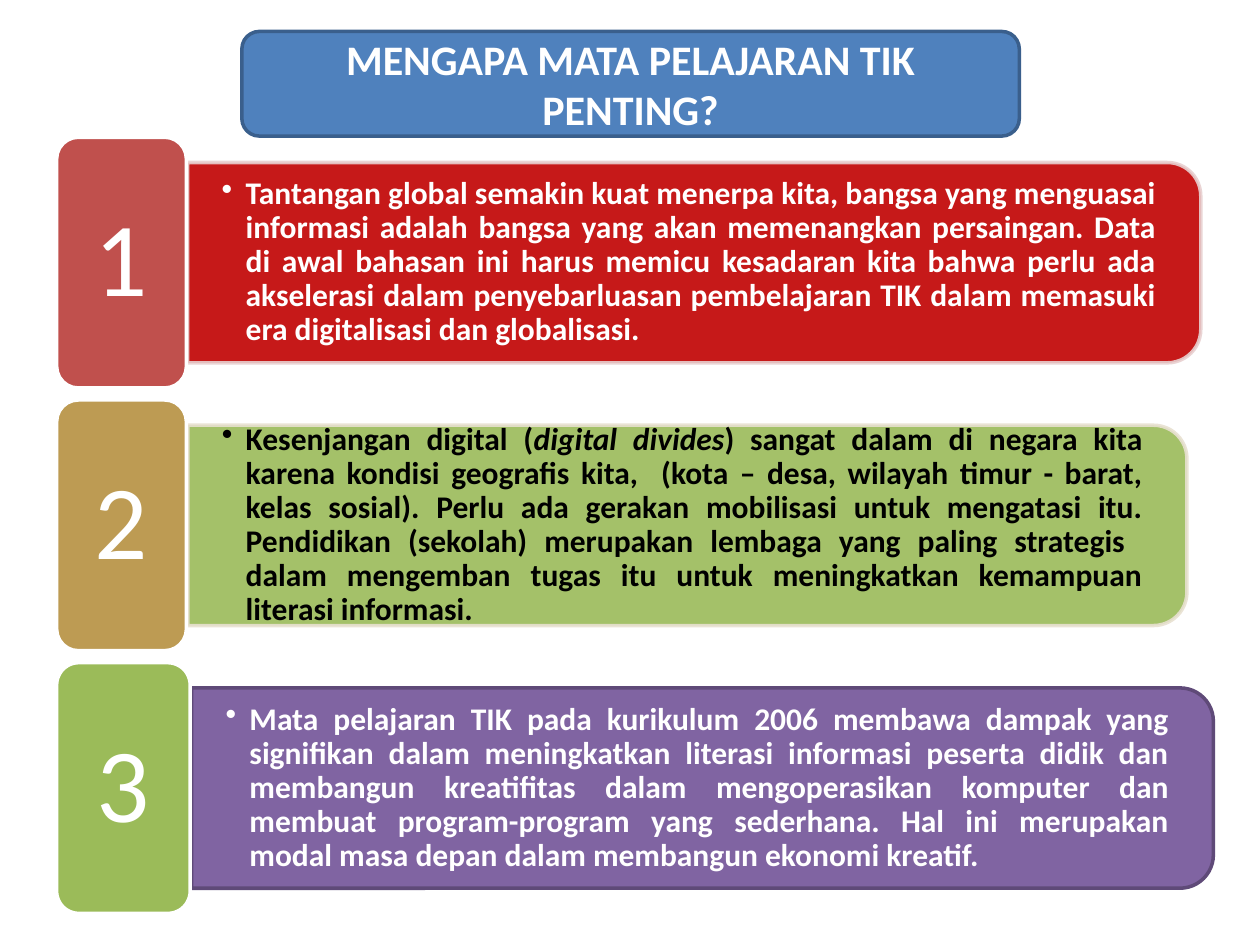
from lxml.etree import SubElement
from pptx import Presentation
from pptx.dml.color import RGBColor
from pptx.enum.shapes import MSO_SHAPE
from pptx.enum.text import MSO_ANCHOR, PP_ALIGN
from pptx.oxml.ns import qn
from pptx.util import Inches, Pt

COLORS = {
    "white": "FFFFFF", "black": "000000",
    "title": "4F81BD", "title_edge": "3A5F8C",
    "red": "C00000", "red_edge": "E8D0D0", "red_tab": "C0504D",
    "green": "9BBB59", "green_edge": "E8E1D1", "gold_tab": "BD9B53",
    "purple": "8064A2", "purple_edge": "5F4A78",
}
FONT = "Calibri"
TITLE = "MENGAPA MATA PELAJARAN TIK PENTING?"
REASONS = [
    {"panel": "red", "edge": "red_edge", "tab": "red_tab", "ink": "white", "opacity": 90,
     "tab_width": 10.3, "panel_width": 80.4,
     "spans": [("Tantangan global semakin kuat menerpa kita, bangsa yang menguasai informasi "
                "adalah bangsa yang akan memenangkan persaingan. Data di awal bahasan ini harus "
                "memicu kesadaran kita bahwa perlu ada akselerasi dalam penyebarluasan "
                "pembelajaran TIK dalam memasuki era digitalisasi dan globalisasi.", False)]},
    {"panel": "green", "edge": "green_edge", "tab": "gold_tab", "ink": "black", "opacity": 90,
     "tab_width": 10.3, "panel_width": 79.3,
     "spans": [("Kesenjangan digital (", False), ("digital divides", True),
               (") sangat dalam di negara kita karena kondisi geografis kita,  (kota – desa, "
                "wilayah timur - barat, kelas sosial). Perlu ada gerakan mobilisasi untuk "
                "mengatasi itu. Pendidikan (sekolah) merupakan lembaga yang paling strategis  "
                "dalam mengemban tugas itu untuk meningkatkan kemampuan literasi informasi.",
                False)]},
    {"panel": "purple", "edge": "purple_edge", "tab": "green", "ink": "white", "opacity": 100,
     "tab_width": 10.6, "panel_width": 81.1,
     "spans": [("Mata pelajaran TIK pada kurikulum 2006 membawa dampak yang signifikan dalam "
                "meningkatkan literasi informasi peserta didik dan membangun kreatifitas dalam "
                "mengoperasikan komputer dan membuat program-program yang sederhana. Hal ini "
                "merupakan modal masa depan dalam membangun ekonomi kreatif.", False)]},
]
TAB_LEFT, FIRST_TOP, TAB_HEIGHT, ROW_STEP = 4.5, 14.53, 26.53, 27.8
PANEL_HEIGHT, TEXT_HEIGHT, TEXT_TRIM = 21.2, 19.07, 0.8

deck = Presentation()
deck.slide_width, deck.slide_height = Inches(10), Inches(7.5)
page = deck.slides.add_slide(deck.slide_layouts[6])


def across(percent):
    return int(deck.slide_width * percent / 100)


def down(percent):
    return int(deck.slide_height * percent / 100)


def color(name):
    return RGBColor.from_string(COLORS[name])


def add_block(kind, frame, fill, edge, opacity=100):
    block = page.shapes.add_shape(kind, *frame)
    block.shadow.inherit = False
    block.fill.solid()
    block.fill.fore_color.rgb = color(fill)
    block.line.color.rgb = color(edge)
    block.line.width = Pt(2)
    if opacity < 100:
        for tint in block._element.spPr.iter(qn("a:srgbClr")):
            SubElement(tint, qn("a:alpha"), val=str(opacity * 1000))
    return block


def style(font, size, ink, bold=False, italic=False):
    font.name, font.size, font.bold, font.italic = FONT, Pt(size), bold, italic
    font.color.rgb = color(ink)


def add_label(block, text, size, bold=False):
    frame = block.text_frame
    frame.text = text
    frame.word_wrap = True
    frame.vertical_anchor = MSO_ANCHOR.MIDDLE
    para = frame.paragraphs[0]
    para.alignment = PP_ALIGN.CENTER
    style(para.runs[0].font, size, "white", bold)
    return para


def add_bullet_text(frame, spans, ink):
    box = page.shapes.add_textbox(*frame).text_frame
    box.word_wrap = True
    box.vertical_anchor = MSO_ANCHOR.MIDDLE
    box.margin_left = box.margin_right = Inches(0.27)
    box.margin_top = box.margin_bottom = Inches(0.14)
    para = box.paragraphs[0]
    para.alignment = PP_ALIGN.JUSTIFY
    para.line_spacing = 0.9
    para.level = 1
    properties = para._p.get_or_add_pPr()
    properties.set("marL", str(Inches(0.19)))
    properties.set("indent", str(-Inches(0.19)))
    SubElement(properties, qn("a:buChar"), char="•")
    for text, italic in spans:
        span = para.add_run()
        span.text = text
        style(span.font, 18, ink, True, italic)


def add_reason(index, reason):
    top = FIRST_TOP + index * ROW_STEP
    middle = down(top + TAB_HEIGHT / 2)
    left = across(TAB_LEFT + reason["tab_width"] + 0.1)
    length, thickness = across(reason["panel_width"]), down(PANEL_HEIGHT)
    upright = (left + (length - thickness) // 2, middle - length // 2, thickness, length)
    panel = add_block(MSO_SHAPE.ROUND_2_SAME_RECTANGLE, upright,
                      reason["panel"], reason["edge"], reason["opacity"])
    panel.rotation = 90
    text_height = down(TEXT_HEIGHT)
    add_bullet_text((left, middle - text_height // 2, length - across(TEXT_TRIM), text_height),
                    reason["spans"], reason["ink"])
    tab = add_block(MSO_SHAPE.ROUNDED_RECTANGLE,
                    (across(TAB_LEFT), down(top), across(reason["tab_width"]), down(TAB_HEIGHT)),
                    reason["tab"], "white")
    add_label(tab, str(index + 1), 60).line_spacing = 0.9


title = add_block(MSO_SHAPE.ROUNDED_RECTANGLE,
                  (across(19.2), down(3.33), across(61.7), down(11.07)), "title", "title_edge")
add_label(title, TITLE, 24, True)
for index, reason in enumerate(REASONS):
    add_reason(index, reason)

deck.save("out.pptx")
